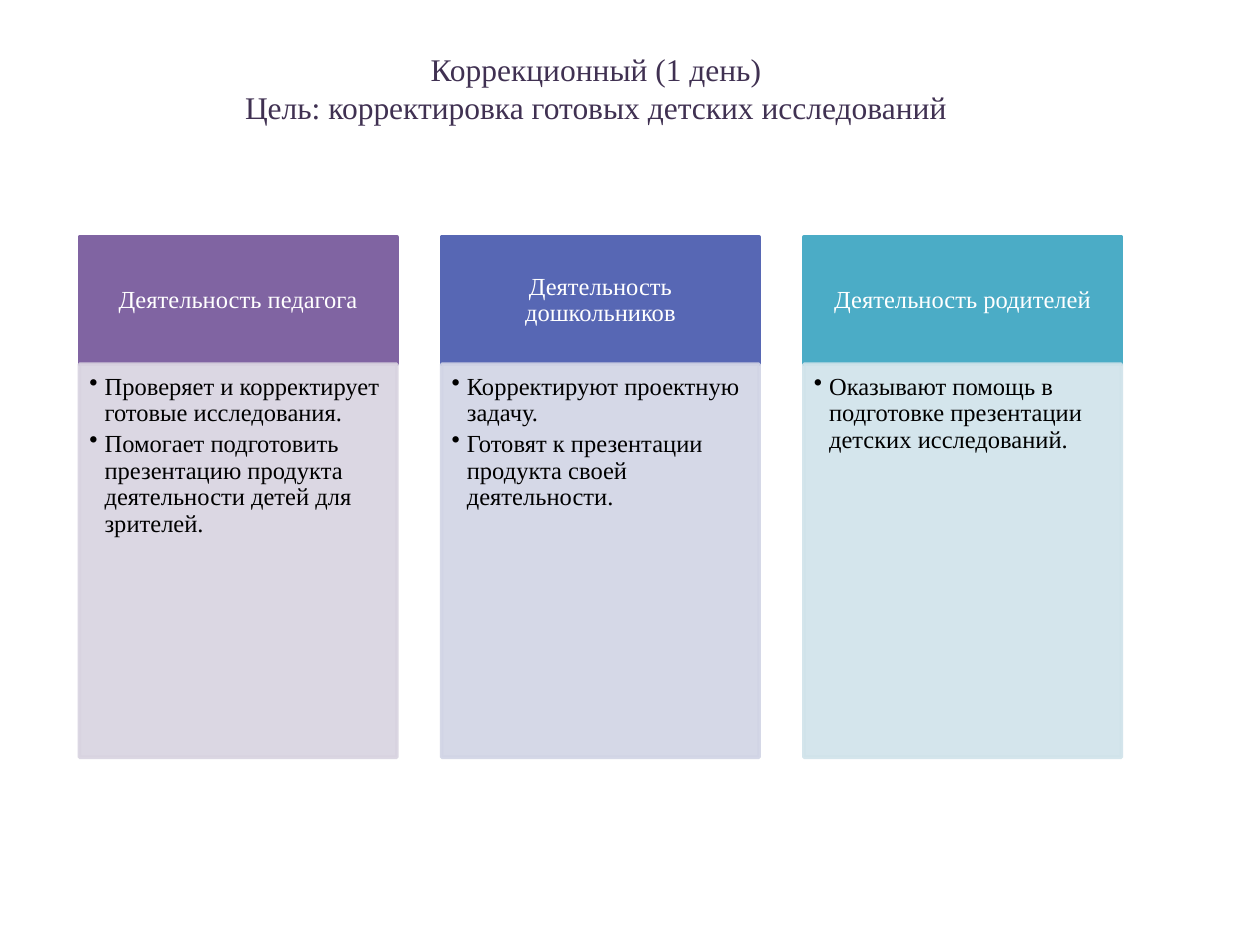
from dataclasses import dataclass

from lxml.etree import SubElement
from pptx import Presentation
from pptx.dml.color import RGBColor
from pptx.enum.shapes import MSO_SHAPE as Kind
from pptx.enum.text import MSO_ANCHOR as Anchor, PP_ALIGN as Align
from pptx.oxml.ns import qn
from pptx.util import Inches, Pt

FONT = "Times New Roman"
LEFT, LAST = 0.63, 6.38
WIDTH = 2.52
HEAD_TOP, HEAD_TALL = 1.88, 1.01
BODY_TOP, BODY_TALL = HEAD_TOP + HEAD_TALL, 3.12


@dataclass
class Column:
    head: str
    dark: str
    pale: str
    items: list[str]


COLUMNS = [
    Column("Деятельность педагога", "8064A2", "D8D3E0", [
        "Проверяет и корректирует готовые исследования.",
        "Помогает подготовить презентацию продукта деятельности детей для зрителей.",
    ]),
    Column("Деятельность дошкольников", "5767B4", "D1D4E5", [
        "Корректируют проектную задачу.",
        "Готовят к презентации продукта своей деятельности.",
    ]),
    Column("Деятельность родителей", "4BACC6", "D0E3EA", [
        "Оказывают помощь в подготовке презентации детских исследований.",
    ]),
]


def paint(target, color: str, alpha: int = 100) -> None:
    """Fill a shape or line with a hex colour and a percent opacity."""
    target.solid()
    target.fore_color.rgb = RGBColor.from_string(color)
    if alpha < 100:
        for tone in target._xPr.iter(qn("a:srgbClr")):
            SubElement(tone, qn("a:alpha"), val=str(alpha * 1000))


def add_run(para, text: str, size: int, color: str) -> None:
    run = para.add_run()
    run.text = text
    run.font.name = FONT
    run.font.size = Pt(size)
    run.font.color.rgb = RGBColor.from_string(color)


def set_insets(frame, left: float, top: float, right: float, bottom: float) -> None:
    frame.margin_left, frame.margin_top = Inches(left), Inches(top)
    frame.margin_right, frame.margin_bottom = Inches(right), Inches(bottom)


def add_box(slide, left: float, top: float, tall: float, color: str, alpha: int = 100):
    box = slide.shapes.add_shape(
        Kind.RECTANGLE, Inches(left), Inches(top), Inches(WIDTH), Inches(tall))
    box.shadow.inherit = False
    paint(box.fill, color, alpha)
    box.line.width = Pt(2)
    paint(box.line.fill, color, alpha)
    box.text_frame.word_wrap = True
    return box


def add_bullet(para) -> None:
    props = para._p.get_or_add_pPr()
    props.set("marL", str(Inches(0.12)))
    props.set("indent", str(-Inches(0.12)))
    SubElement(props, qn("a:buChar"), char="•")


def add_head(slide, left: float, col: Column) -> None:
    frame = add_box(slide, left, HEAD_TOP, HEAD_TALL, col.dark).text_frame
    frame.vertical_anchor = Anchor.MIDDLE
    set_insets(frame, 0.11, 0.06, 0.11, 0.06)
    para = frame.paragraphs[0]
    para.alignment = Align.CENTER
    para.line_spacing = 0.9
    add_run(para, col.head, 14, "FFFFFF")


def add_body(slide, left: float, col: Column) -> None:
    frame = add_box(slide, left, BODY_TOP, BODY_TALL, col.pale, 90).text_frame
    frame.vertical_anchor = Anchor.TOP
    set_insets(frame, 0.08, 0.08, 0.11, 0.12)
    for i, item in enumerate(col.items):
        para = frame.add_paragraph() if i else frame.paragraphs[0]
        add_bullet(para)
        para.alignment = Align.LEFT
        para.line_spacing = 0.9
        para.space_after = Pt(2.4)
        add_run(para, item, 14, "000000")


def add_title(slide) -> None:
    title = slide.shapes.title
    title.left, title.top = Inches(0.47), Inches(0.55)
    title.width, title.height = Inches(8.52), Inches(0.94)
    frame = title.text_frame
    frame.vertical_anchor = Anchor.MIDDLE
    set_insets(frame, 0.1, 0.05, 0.1, 0.69)
    para = frame.paragraphs[0]
    para.alignment = Align.CENTER
    add_run(para, "Коррекционный (1 день)", 18, "403152")
    para.add_line_break()
    add_run(para, "Цель: корректировка готовых детских исследований", 18, "403152")


def main() -> None:
    deck = Presentation()
    deck.slide_width, deck.slide_height = Inches(10), Inches(7.5)
    slide = deck.slides.add_slide(deck.slide_layouts[5])
    add_title(slide)
    step = (LAST - LEFT) / (len(COLUMNS) - 1)
    for i, col in enumerate(COLUMNS):
        left = LEFT + i * step
        add_head(slide, left, col)
        add_body(slide, left, col)
    deck.save("out.pptx")


if __name__ == "__main__":
    main()
